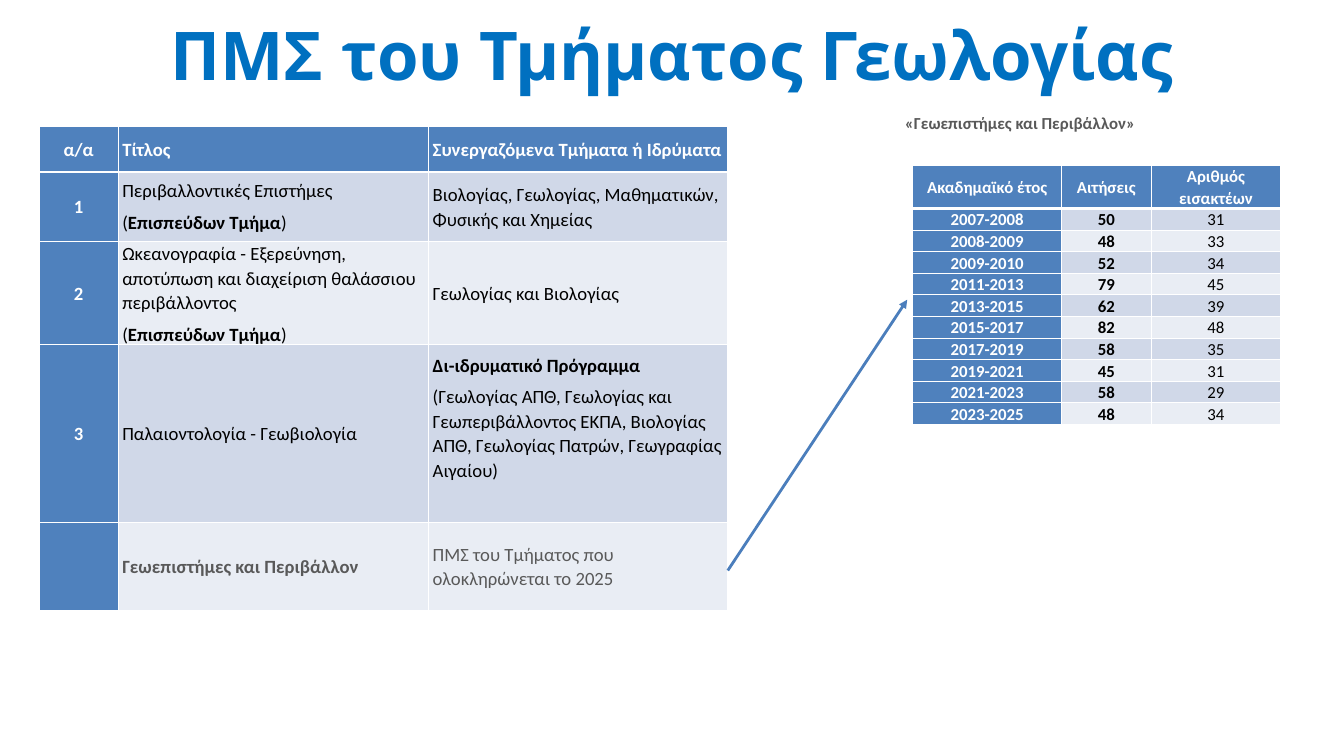
from dataclasses import dataclass

from lxml.etree import SubElement
from pptx import Presentation
from pptx.dml.color import RGBColor as RGB
from pptx.enum.shapes import MSO_CONNECTOR as CONN
from pptx.enum.text import MSO_ANCHOR as ANCHOR, PP_ALIGN as ALIGN
from pptx.oxml.ns import qn
from pptx.util import Inches, Pt


@dataclass(frozen=True)
class Theme:
    title: str = "0070C0"
    head: str = "4F81BD"
    bands: tuple = ("D0D8E8", "E9EDF4")
    white: str = "FFFFFF"
    ink: str = "000000"
    muted: str = "595959"
    arrow: str = "4B7EBC"
    title_font: str = "Open Sans"
    body_font: str = "Calibri"
    title_size: int = 72
    body_size: int = 20
    small_size: int = 18


T = Theme()
TITLE = "ΠΜΣ του Τμήματος Γεωλογίας"
CAPTION = "«Γεωεπιστήμες και Περιβάλλον»"
LEAD = [("(", False), ("Επισπεύδων Τμήμα", True), (")", False)]

# A cell is a list of paragraphs, a paragraph a string or a list of (text, bold) runs
PROGRAMMES = [
    (["α/α"], ["Τίτλος"], ["Συνεργαζόμενα Τμήματα ή Ιδρύματα"]),
    (["1"], ["Περιβαλλοντικές Επιστήμες", LEAD],
     ["Βιολογίας, Γεωλογίας, Μαθηματικών, Φυσικής και Χημείας"]),
    (["2"], ["Ωκεανογραφία - Εξερεύνηση, αποτύπωση και διαχείριση θαλάσσιου περιβάλλοντος", LEAD],
     ["Γεωλογίας και Βιολογίας"]),
    (["3"], ["Παλαιοντολογία - Γεωβιολογία"],
     [[("Δι-ιδρυματικό Πρόγραμμα", True)],
      "(Γεωλογίας ΑΠΘ, Γεωλογίας και Γεωπεριβάλλοντος ΕΚΠΑ, Βιολογίας ΑΠΘ, "
      "Γεωλογίας Πατρών, Γεωγραφίας Αιγαίου)"]),
    ([], [[("Γεωεπιστήμες και Περιβάλλον", True)]],
     ["ΠΜΣ του Τμήματος που ολοκληρώνεται το 2025"]),
]
ADMISSIONS = [
    ("Ακαδημαϊκό έτος", "Αιτήσεις", "Αριθμός εισακτέων"),
    ("2007-2008", 50, 31), ("2008-2009", 48, 33), ("2009-2010", 52, 34),
    ("2011-2013", 79, 45), ("2013-2015", 62, 39), ("2015-2017", 82, 48),
    ("2017-2019", 58, 35), ("2019-2021", 45, 31), ("2021-2023", 58, 29),
    ("2023-2025", 48, 34),
]


def write(tf, paragraphs, size, color, bold=False, align=ALIGN.LEFT, font=T.body_font, spacing=1.07):
    """Fill a text frame with paragraphs in one style."""
    for i, content in enumerate(paragraphs):
        p = tf.paragraphs[0] if i == 0 else tf.add_paragraph()
        p.alignment, p.line_spacing, p.space_after = align, spacing, Pt(8)
        for text, strong in [(content, bold)] if isinstance(content, str) else content:
            r = p.add_run()
            r.text = text
            r.font.name, r.font.size, r.font.bold = font, Pt(size), strong
            r.font.color.rgb = RGB.from_string(color)


def set_borders(cell, row):
    """Draw white cell borders, heavier between header and body."""
    heavy = {0: "lnB", 1: "lnT"}.get(row)
    for side in ("lnL", "lnR", "lnT", "lnB"):
        ln = SubElement(cell._tc.get_or_add_tcPr(), qn(f"a:{side}"), w=str(Pt(3 if side == heavy else 1)))
        SubElement(SubElement(ln, qn("a:solidFill")), qn("a:srgbClr"), val=T.white)


def add_grid(slide, left, top, widths, heights, rows, inset, style):
    """Add a banded table whose text style comes from style(row, column)."""
    frame = slide.shapes.add_table(len(rows), len(widths), Inches(left), Inches(top),
                                   Inches(sum(widths)), Inches(sum(heights)))
    table = frame.table
    for column, width in zip(table.columns, widths):
        column.width = Inches(width)
    for i, (height, values) in enumerate(zip(heights, rows)):
        table.rows[i].height = Inches(height)
        for j, value in enumerate(values):
            cell = table.cell(i, j)
            cell.margin_left = cell.margin_right = Inches(inset)
            cell.margin_top = cell.margin_bottom = 0
            set_borders(cell, i)
            cell.fill.solid()
            cell.fill.fore_color.rgb = RGB.from_string(
                T.head if i == 0 or j == 0 else T.bands[(i - 1) % 2])
            anchor, text_style = style(i, j)
            cell.vertical_anchor = anchor
            write(cell.text_frame, value if isinstance(value, list) else [str(value)], **text_style)
    return table


def programme_style(i, j):
    """Style of the programmes table."""
    head = i == 0 or j == 0
    color = T.white if head else T.muted if i == len(PROGRAMMES) - 1 else T.ink
    return ANCHOR.MIDDLE, dict(size=T.body_size, color=color, bold=head,
                               align=ALIGN.CENTER if j == 0 else ALIGN.LEFT)


def admission_style(i, j):
    """Style of the admissions table."""
    head = i == 0 or j == 0
    return ANCHOR.MIDDLE if i == 0 else ANCHOR.TOP, dict(
        size=T.small_size, color=T.white if head else T.ink, bold=head or j == 1, align=ALIGN.CENTER)


def add_text(slide, left, top, width, height, text, **style):
    """Add a centred bold text box."""
    tf = slide.shapes.add_textbox(Inches(left), Inches(top), Inches(width), Inches(height)).text_frame
    tf.word_wrap = True
    write(tf, [text], bold=True, align=ALIGN.CENTER, **style)
    return tf


def main():
    """Build the slide of the department's postgraduate programmes."""
    prs = Presentation()
    prs.slide_width, prs.slide_height = Inches(20), Inches(11.25)
    s = prs.slides.add_slide(prs.slide_layouts[6])

    tf = add_text(s, 1.81, 0.29, 16.38, 1.11, TITLE, size=T.title_size, color=T.title,
                  font=T.title_font, spacing=Pt(79.4))
    tf.margin_left = tf.margin_right = tf.margin_top = tf.margin_bottom = 0

    programmes = add_grid(s, 0.58, 1.88, [1.18, 4.62, 4.45], [0.68, 1.03, 1.49, 2.64, 1.32],
                          PROGRAMMES, 0.06, programme_style)
    programmes.cell(3, 2).margin_bottom = Inches(0.47)
    add_grid(s, 13.58, 2.46, [2.22, 1.33, 1.93], [0.55] + [0.27] * (len(ADMISSIONS) - 1),
             ADMISSIONS, 0.07, admission_style)
    add_text(s, 13.14, 1.61, 4.08, 0.41, CAPTION, size=T.small_size, color=T.muted)

    arrow = s.shapes.add_connector(CONN.STRAIGHT, Inches(10.83), Inches(8.49), Inches(13.5), Inches(4.46))
    arrow.line.color.rgb = RGB.from_string(T.arrow)
    arrow.line.width = Pt(3)
    SubElement(arrow.line._get_or_add_ln(), qn("a:tailEnd"), type="triangle")
    SubElement(arrow._element.spPr, qn("a:effectLst"))

    prs.save("out.pptx")


if __name__ == "__main__":
    main()
